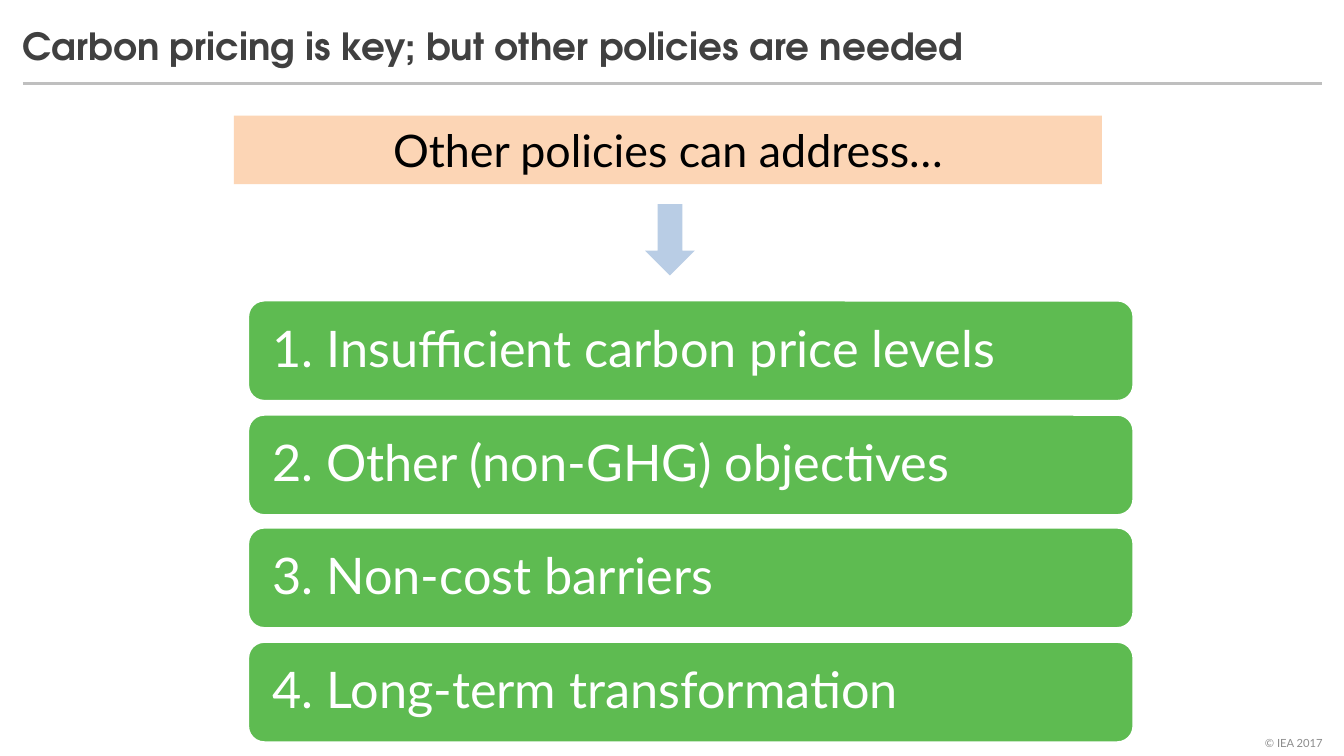
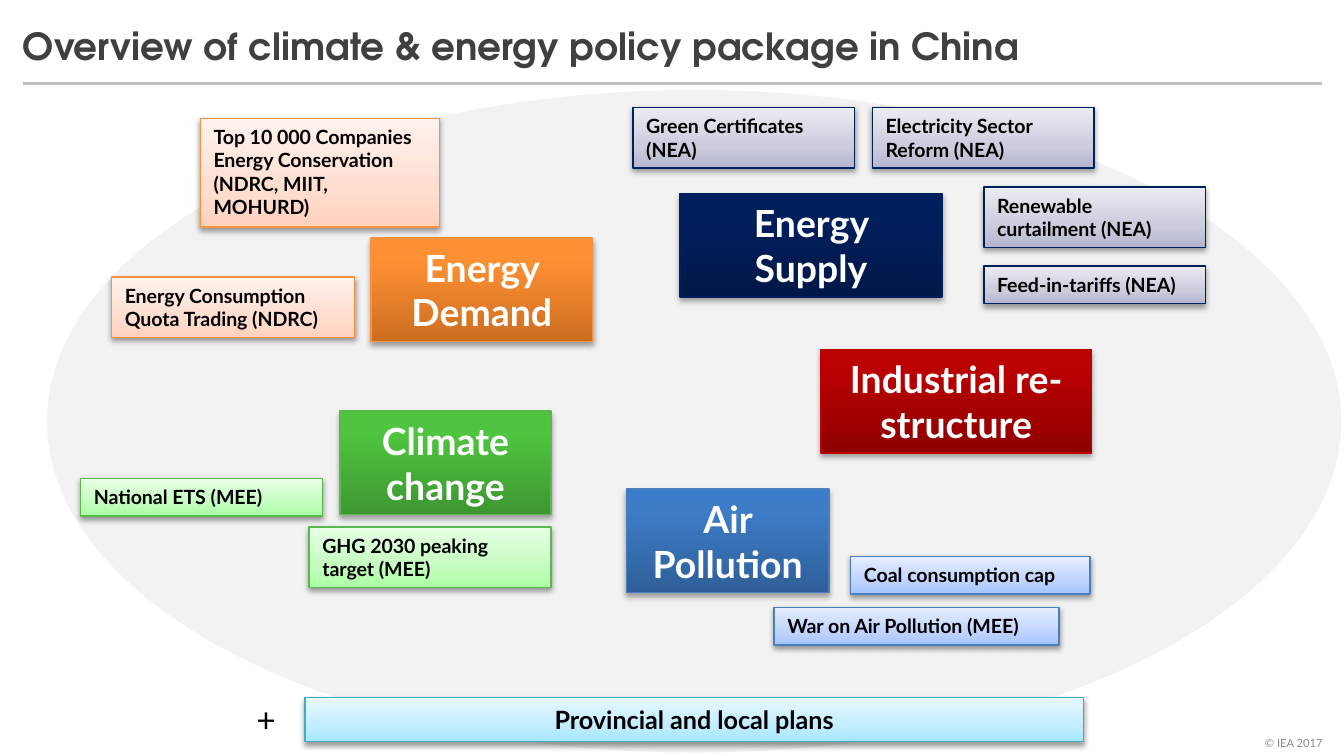
from collections import namedtuple

from lxml import etree
from pptx import Presentation
from pptx.dml.color import RGBColor
from pptx.enum.shapes import MSO_CONNECTOR, MSO_SHAPE
from pptx.enum.text import MSO_ANCHOR, PP_ALIGN
from pptx.oxml.ns import qn
from pptx.util import Emu, Pt

PX = 9144  # 100 px to the inch
SLIDE_WIDTH = 1000

LEFT, CENTER, RIGHT = PP_ALIGN.LEFT, PP_ALIGN.CENTER, PP_ALIGN.RIGHT
TOP, MIDDLE = MSO_ANCHOR.TOP, MSO_ANCHOR.MIDDLE
RECTANGLE, ROUNDED = MSO_SHAPE.RECTANGLE, MSO_SHAPE.ROUNDED_RECTANGLE
OVAL, DOWN_ARROW = MSO_SHAPE.OVAL, MSO_SHAPE.DOWN_ARROW
STRAIGHT = MSO_CONNECTOR.STRAIGHT

BODY_FONT = "Lato"
TITLE_FONT = "TeX Gyre Adventor"

rgb = RGBColor.from_string
BLACK = rgb("000000")
WHITE = rgb("FFFFFF")
TITLE_GREY = rgb("404040")
RULE_GREY = rgb("BFBFBF")
FOOTER_GREY = rgb("8C8C8C")
OVAL_GREY = rgb("F2F2F2")
PEACH = rgb("FCD5B5")
PALE_BLUE = rgb("B9CDE5")
LIST_GREEN = rgb("5EBB51")

# Gradient colours run from the bottom of a box to its top.
Palette = namedtuple("Palette", "line light dark")
ORANGE = Palette(rgb("F69240"),
                 (rgb("FFD2BD"), rgb("FFDED0"), rgb("FFF2ED")),
                 (rgb("CC6E20"), rgb("FF9034"), rgb("FF9136")))
GREEN = Palette(rgb("5AB94D"),
                (rgb("ABFEA4"), rgb("C4FDC0"), rgb("E8FFE6")),
                (rgb("3D9731"), rgb("4FC53F"), rgb("4EC83D")))
NAVY = Palette(rgb("001F5E"),
               (rgb("B4B6CE"), rgb("CBCCDC"), rgb("EBECF2")),
               (rgb("001848"), rgb("001F5D"), rgb("001F5D")))
RED = Palette(rgb("BC0000"), None,
              (rgb("8F0000"), rgb("BA0000"), rgb("BB0000")))
BLUE = Palette(rgb("4B7EBC"),
               (rgb("A4C4FF"), rgb("BFD4FF"), rgb("E6EEFF")),
               (rgb("2F5F99"), rgb("3D7CC7"), rgb("3A7CCB")))
CYAN = Palette(rgb("46AAC5"),
               (rgb("A7E6FF"), rgb("C1EDFF"), rgb("E7F8FF")), None)
LIGHT_STOPS = (0, 35, 100)
DARK_STOPS = (0, 80, 100)

BARRIERS = (
    "1. Insufficient carbon price levels",
    "2. Other (non-GHG) objectives",
    "3. Non-cost barriers",
    "4. Long-term transformation",
)

POLICY_AREAS = (
    ("Energy Demand", ORANGE, (276, 177, 165, 77)),
    ("Energy Supply", NAVY, (506, 144, 195, 77)),
    ("Industrial re-structure", RED, (611, 260, 201, 77)),
    ("Climate change", GREEN, (253, 306, 157, 77)),
    ("Air Pollution", BLUE, (466, 364, 151, 77)),
)

MEASURES = (
    ("Top 10 000 Companies Energy Conservation (NDRC, MIIT, MOHURD)",
     ORANGE, (149, 88, 178, 81)),
    ("Energy Consumption Quota Trading (NDRC)", ORANGE, (83, 206, 181, 45)),
    ("National ETS (MEE)", GREEN, (60, 356, 180, 28)),
    ("GHG 2030 peaking target (MEE)", GREEN, (230, 392, 180, 45)),
    ("Green Certificates (NEA)", NAVY, (471, 80, 165, 45)),
    ("Electricity Sector Reform (NEA)", NAVY, (649, 80, 165, 45)),
    ("Renewable curtailment (NEA)", NAVY, (732, 139, 165, 45)),
    ("Feed-in-tariffs (NEA)", NAVY, (732, 198, 165, 28)),
    ("Coal consumption cap", BLUE, (633, 414, 178, 28)),
    ("War on Air Pollution (MEE)", BLUE, (576, 452, 212, 28)),
)


def px(*lengths):
    return [Emu(length * PX) for length in lengths]


def write(box, text, size=10.5, color=BLACK, bold=False, font=BODY_FONT,
          align=LEFT, anchor=TOP, inset=10, line_spacing=None):
    frame = box.text_frame
    frame.word_wrap = True
    frame.vertical_anchor = anchor
    frame.margin_left, frame.margin_right = px(inset, inset)
    para = frame.paragraphs[0]
    para.alignment = align
    para.line_spacing = line_spacing
    span = para.add_run()
    span.text = text
    span.font.name = font
    span.font.size = Pt(size)
    span.font.bold = bold
    span.font.color.rgb = color


def add_text(page, place, text, **style):
    write(page.shapes.add_textbox(*px(*place)), text, **style)


def add_box(page, kind, place, fill=None, line=None, line_width=0.75):
    box = page.shapes.add_shape(kind, *px(*place))
    box.shadow.inherit = False
    if fill is not None:
        box.fill.solid()
        box.fill.fore_color.rgb = fill
    if line is None:
        box.line.fill.background()
    else:
        box.line.color.rgb = line
        box.line.width = Pt(line_width)
    return box


def add_color(parent, color):
    return etree.SubElement(parent, qn("a:srgbClr"), val=str(color))


def set_gradient(box, colors, stops):
    box.fill.gradient()
    box.fill.gradient_angle = 90
    stop_list = next(box._element.spPr.iter(qn("a:gsLst")))
    for stop in list(stop_list):
        stop_list.remove(stop)
    for color, percent in zip(colors, stops):
        stop = etree.SubElement(stop_list, qn("a:gs"), pos=str(percent * 1000))
        add_color(stop, color)


def set_shadow(box, distance, opacity):
    effects = box._element.spPr.find(qn("a:effectLst"))
    shadow = etree.SubElement(
        effects, qn("a:outerShdw"), blurRad=str(Pt(3.1)),
        dist=str(Pt(distance)), dir="5400000", rotWithShape="0")
    etree.SubElement(add_color(shadow, BLACK), qn("a:alpha"),
                     val=str(opacity * 1000))


def add_measure(page, text, palette, place, **style):
    """Light gradient box for a single policy measure."""
    box = add_box(page, RECTANGLE, place, line=palette.line)
    set_gradient(box, palette.light, LIGHT_STOPS)
    set_shadow(box, 1.6, 38)
    write(box, text, bold=True, **style)


def add_policy_area(page, text, palette, place):
    """Dark gradient box that heads a group of measures."""
    box = add_box(page, RECTANGLE, place, line=palette.line)
    set_gradient(box, palette.dark, DARK_STOPS)
    set_shadow(box, 1.8, 35)
    write(box, text, size=20, color=WHITE, bold=True, align=CENTER,
          anchor=MIDDLE)


def add_page(deck, title):
    """Blank slide with the shared title, rule and footer."""
    page = deck.slides.add_slide(deck.slide_layouts[6])
    add_text(page, (921, 539, 73, 27), "© IEA 2017", size=6,
             color=FOOTER_GREY, align=RIGHT, anchor=MIDDLE)
    rule = page.shapes.add_connector(STRAIGHT, *px(17, 62, 984, 62))
    rule.line.color.rgb = RULE_GREY
    rule.line.width = Pt(1.5)
    etree.SubElement(rule._element.spPr, qn("a:effectLst"))
    add_text(page, (7, 12, 908, 48), title, size=20, color=TITLE_GREY,
             bold=True, font=TITLE_FONT)
    return page


def build_other_policies(deck):
    page = add_page(deck, "Carbon pricing is key; but other policies are needed")
    heading = add_box(page, RECTANGLE, (174, 86, 646, 51), PEACH)
    write(heading, "Other policies can address…", size=24, align=CENTER,
          anchor=MIDDLE)
    add_box(page, DOWN_ARROW, (480, 152, 37, 53), PALE_BLUE)

    first_top, last_top = 223, 477
    for index, text in enumerate(BARRIERS):
        top = first_top + round(index * (last_top - first_top) / 3)
        bar = add_box(page, ROUNDED, (184, top, 660, 76), LIST_GREEN,
                      line=WHITE, line_width=2)
        write(bar, text, size=27, color=WHITE, anchor=MIDDLE, inset=15,
              line_spacing=0.9)


def build_policy_package(deck):
    page = add_page(deck, "Overview of climate & energy policy package in China")
    add_box(page, OVAL, (35, 67, 963, 493), OVAL_GREY)
    for measure in MEASURES:
        add_measure(page, *measure)
    for area in POLICY_AREAS:
        add_policy_area(page, *area)
    add_measure(page, "Provincial and local plans", CYAN, (227, 519, 579, 33),
                size=13.5, align=CENTER)
    add_text(page, (181, 515, 38, 40), "+", size=18)


def main():
    deck = Presentation()
    deck.slide_width = Emu(SLIDE_WIDTH * PX)
    deck.slide_height = Emu(deck.slide_width * 9 // 16)
    build_other_policies(deck)
    build_policy_package(deck)
    deck.save("out.pptx")


if __name__ == "__main__":
    main()
